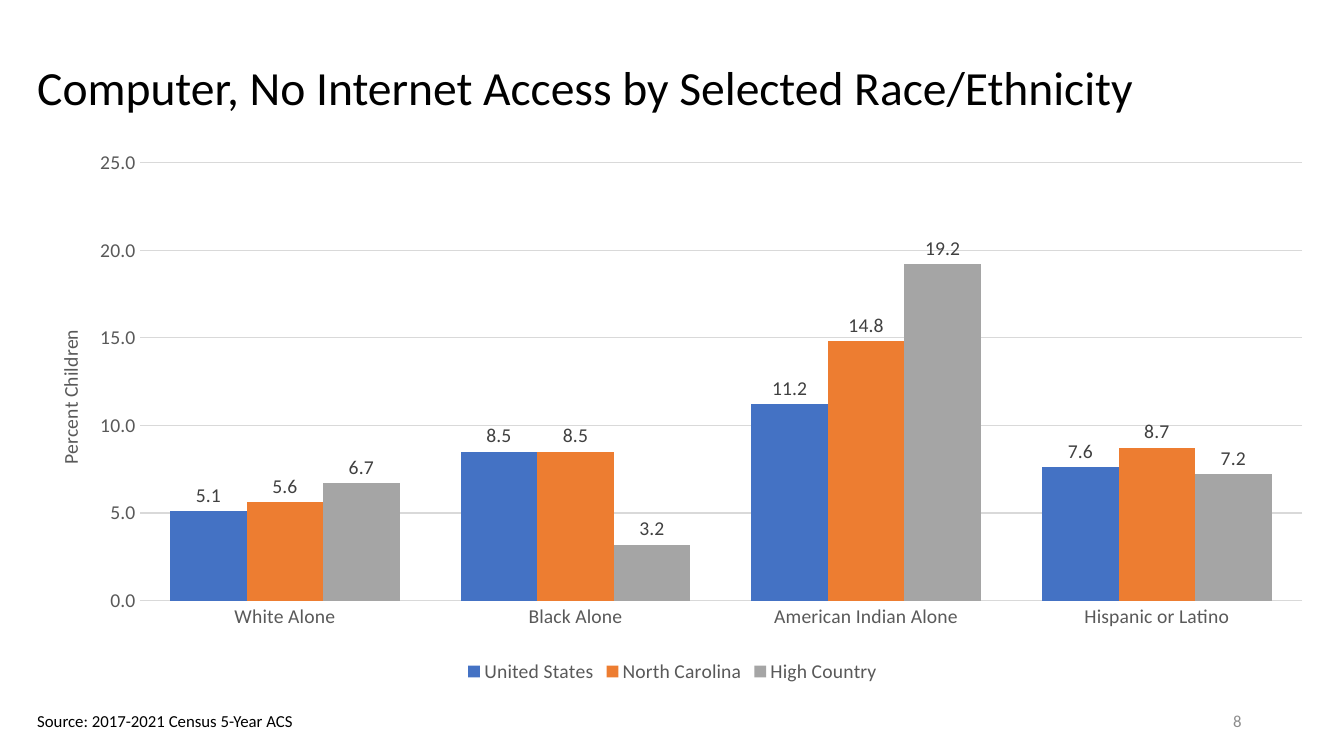
"""Build the slide on children with a computer but no internet access."""
from lxml.etree import SubElement
from pptx import Presentation
from pptx.chart.data import CategoryChartData
from pptx.dml.color import RGBColor
from pptx.enum.chart import XL_CHART_TYPE as ChartType
from pptx.enum.chart import XL_LABEL_POSITION as LabelPosition
from pptx.enum.chart import XL_LEGEND_POSITION as LegendPosition
from pptx.enum.chart import XL_TICK_MARK as TickMark
from pptx.enum.text import MSO_ANCHOR as Anchor
from pptx.enum.text import PP_ALIGN as Align
from pptx.oxml.ns import qn
from pptx.util import Pt

EMU_PER_PX = 9525
FONT = "Calibri"
GREY, DARK_GREY, RULE = "595959", "404040", "D9D9D9"
NUMBER_FORMAT = "#,##0.0"
GROUPS = ["White Alone", "Black Alone", "American Indian Alone", "Hispanic or Latino"]
REGIONS = [
    ("United States", "4472C4", (5.1, 8.5, 11.2, 7.6)),
    ("North Carolina", "ED7D31", (5.6, 8.5, 14.8, 8.7)),
    ("High Country", "A5A5A5", (6.7, 3.2, 19.2, 7.2)),
]


def px(*lengths):
    """Turn pixel lengths into EMU."""
    return [length * EMU_PER_PX for length in lengths]


def rgb(color):
    """Turn a hex string into a colour."""
    return RGBColor.from_string(color)


def style_font(font, size=14, color=GREY):
    """Set the face, size and colour of a font."""
    font.name = FONT
    font.size = Pt(size)
    font.bold = False
    font.color.rgb = rgb(color)


def style_line(line, color=RULE):
    """Give an axis or gridline a thin coloured stroke."""
    line.color.rgb = rgb(color)
    line.width = Pt(0.75)


def add_text(slide, text, box, size=12, color="000000", align=Align.LEFT,
             anchor=Anchor.TOP, wrap=True, spacing=1.0):
    """Add a text box holding one formatted paragraph."""
    frame = slide.shapes.add_textbox(*px(*box)).text_frame
    frame.word_wrap = wrap
    frame.vertical_anchor = anchor
    paragraph = frame.paragraphs[0]
    paragraph.alignment = align
    paragraph.line_spacing = spacing
    run = paragraph.add_run()
    run.text = text
    style_font(run.font, size, color)


def place(element, index, **settings):
    """Give a chart part a manual layout, as fractions of the chart."""
    layout = element.find(qn("c:layout"))
    if layout is None:
        layout = SubElement(element, qn("c:layout"))
        element.insert(index, layout)
    manual = SubElement(layout, qn("c:manualLayout"))
    for name, value in settings.items():
        SubElement(manual, qn(f"c:{name}")).set("val", str(value))


def style_axes(chart):
    """Format both axes, the gridlines and the value axis title."""
    for axis in (chart.category_axis, chart.value_axis):
        axis.major_tick_mark = axis.minor_tick_mark = TickMark.NONE
        style_font(axis.tick_labels.font)
    style_line(chart.category_axis.format.line)

    percent = chart.value_axis
    percent.minimum_scale, percent.maximum_scale, percent.major_unit = 0, 25, 5
    percent.tick_labels.number_format = NUMBER_FORMAT
    percent.tick_labels.number_format_is_linked = False
    percent.format.line.fill.background()
    style_line(percent.major_gridlines.format.line)
    caption = percent.axis_title.text_frame.paragraphs[0].add_run()
    caption.text = "Percent Children"
    style_font(caption.font)
    place(percent.axis_title._element, 1, xMode="edge", yMode="edge", x=0.02, y=0.335)


def style_columns(plot):
    """Colour the columns and label them with their values."""
    plot.gap_width = 80
    plot.overlap = 0
    plot.vary_by_categories = False
    for series, (_, color, _) in zip(plot.series, REGIONS):
        series.format.fill.solid()
        series.format.fill.fore_color.rgb = rgb(color)
        labels = series.data_labels
        labels.show_value = True
        labels.number_format = NUMBER_FORMAT
        labels.number_format_is_linked = False
        labels.position = LabelPosition.OUTSIDE_END
        style_font(labels.font, color=DARK_GREY)


def add_access_chart(slide, box):
    """Add the clustered columns comparing regions within each group."""
    data = CategoryChartData(number_format=NUMBER_FORMAT)
    data.categories = GROUPS
    for name, _, values in REGIONS:
        data.add_series(name, values)
    chart = slide.shapes.add_chart(ChartType.COLUMN_CLUSTERED, *px(*box), data).chart
    chart.has_title = False
    style_font(chart.font, color="000000")
    chart.has_legend = True
    chart.legend.position = LegendPosition.BOTTOM
    chart.legend.include_in_layout = False
    style_font(chart.legend.font)
    style_axes(chart)
    style_columns(chart.plots[0])
    plot_area = chart._chartSpace.chart.plotArea
    place(plot_area, 0, layoutTarget="inner", xMode="edge", yMode="edge",
          x=0.087, y=0.035, w=0.901, h=0.805)


def main():
    """Build and save the slide."""
    deck = Presentation()
    deck.slide_width, deck.slide_height = px(1280, 720)
    slide = deck.slides.add_slide(deck.slide_layouts[6])
    add_text(slide, "Computer, No Internet Access by Selected Race/Ethnicity",
             (26, 33, 1225, 105), size=34, anchor=Anchor.MIDDLE, spacing=0.9)
    add_text(slide, "8", (904, 667, 288, 38), color="8C8C8C",
             align=Align.RIGHT, anchor=Anchor.MIDDLE)
    add_text(slide, "Source: 2017-2021 Census 5-Year ACS", (26, 672, 267, 29), wrap=False)
    add_access_chart(slide, (26, 137, 1229, 518))
    deck.save("out.pptx")


if __name__ == "__main__":
    main()
